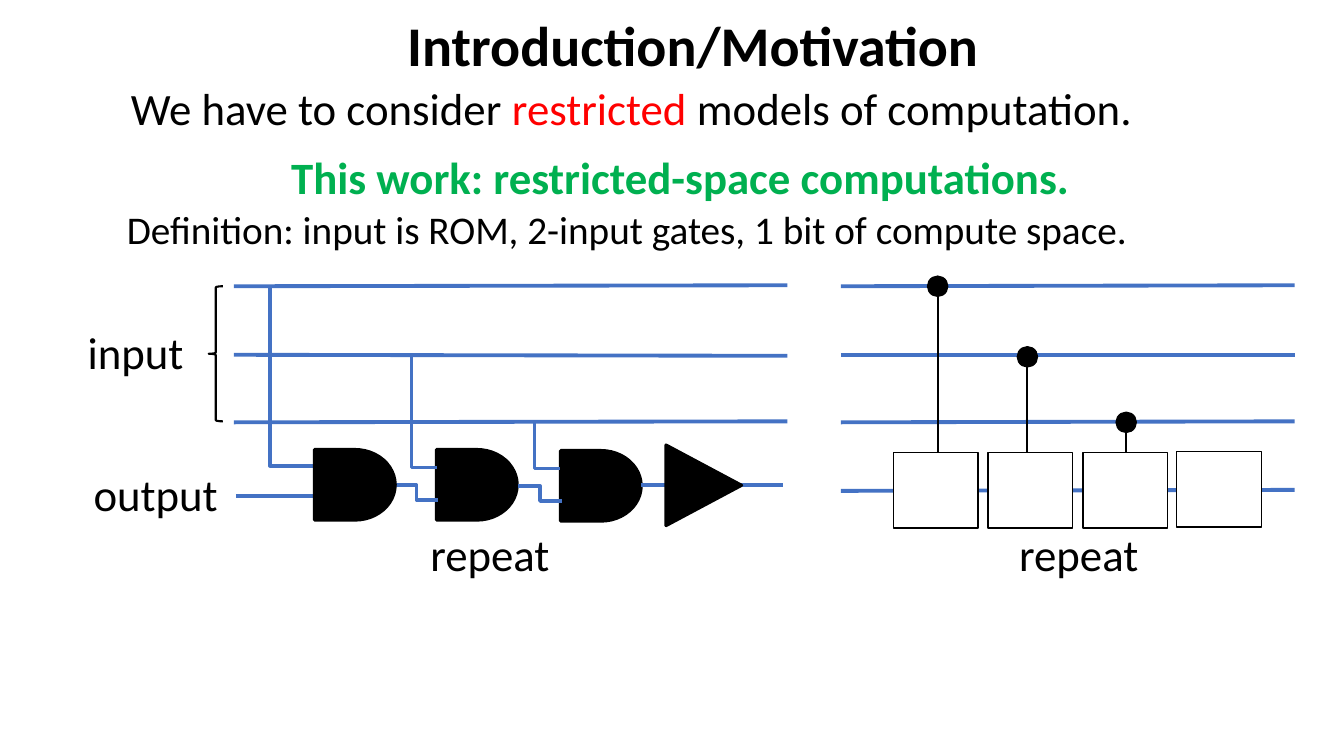
from dataclasses import dataclass

from lxml import etree
from pptx import Presentation
from pptx.dml.color import RGBColor
from pptx.enum.shapes import MSO_CONNECTOR, MSO_SHAPE
from pptx.enum.text import MSO_AUTO_SIZE, PP_ALIGN
from pptx.oxml.ns import qn
from pptx.util import Emu, Pt

STRAIGHT, ELBOW = MSO_CONNECTOR.STRAIGHT, MSO_CONNECTOR.ELBOW
RECT, OVAL, BRACE = MSO_SHAPE.RECTANGLE, MSO_SHAPE.OVAL, MSO_SHAPE.LEFT_BRACE
DELAY, EXTRACT = MSO_SHAPE.FLOWCHART_DELAY, MSO_SHAPE.FLOWCHART_EXTRACT
LEFT, MID, RIGHT = PP_ALIGN.LEFT, PP_ALIGN.CENTER, PP_ALIGN.RIGHT
FIT = MSO_AUTO_SIZE.SHAPE_TO_FIT_TEXT
PX = 9144  # 100 px to the inch


@dataclass(frozen=True)
class Theme:
    font: str = "Calibri"
    black: str = "000000"
    white: str = "FFFFFF"
    blue: str = "4472C4"
    red: str = "FF0000"
    green: str = "00B050"
    title: int = 40
    body: int = 32
    small: int = 28


THEME = Theme()


@dataclass(frozen=True)
class Label:
    box: tuple[int, int, int, int]
    runs: tuple[tuple[str, str], ...]
    size: int = THEME.body
    bold: bool = False
    align: PP_ALIGN = MID


@dataclass(frozen=True)
class Wire:
    start: tuple[int, int]
    end: tuple[int, int]
    width: float = 2.5
    color: str = THEME.blue
    bend: int | None = None  # per cent of the run before an elbow turns


@dataclass(frozen=True)
class Part:
    kind: MSO_SHAPE
    box: tuple[int, int, int, int]
    fill: str | None = THEME.black
    width: float = 1
    turn: int = 0


def px(*lengths: int) -> list[Emu]:
    return [Emu(n * PX) for n in lengths]


def rgb(code: str) -> RGBColor:
    return RGBColor.from_string(code)


def draw_label(slide, label: Label) -> None:
    frame = slide.shapes.add_textbox(*px(*label.box)).text_frame
    for name, value in {"word_wrap": True, "auto_size": FIT}.items():
        setattr(frame, name, value)
    para = frame.paragraphs[0]
    para.alignment = label.align
    style = {"name": THEME.font, "size": Pt(label.size), "bold": label.bold}
    for text, color in label.runs:
        run = para.add_run()
        run.text = text
        for name, value in style.items():
            setattr(run.font, name, value)
        run.font.color.rgb = rgb(color)


def draw_wire(slide, wire: Wire) -> None:
    kind = STRAIGHT if wire.bend is None else ELBOW
    line = slide.shapes.add_connector(kind, *px(*wire.start, *wire.end))
    line.line.width = Pt(wire.width)
    line.line.color.rgb = rgb(wire.color)
    props = line._element.spPr
    etree.SubElement(props, qn("a:effectLst"))
    if wire.bend is not None:
        guides = props.find(qn("a:prstGeom")).find(qn("a:avLst"))
        etree.SubElement(guides, qn("a:gd"), name="adj1", fmla=f"val {wire.bend * 1000}")


def draw_part(slide, part: Part) -> None:
    shape = slide.shapes.add_shape(part.kind, *px(*part.box))
    shape.shadow.inherit = False
    shape.rotation = part.turn
    if part.fill is None:
        shape.fill.background()
    else:
        shape.fill.solid()
        shape.fill.fore_color.rgb = rgb(part.fill)
    shape.line.width = Pt(part.width)
    shape.line.color.rgb = rgb(THEME.black)


def plain(text: str, color: str = THEME.black) -> tuple[tuple[str, str], ...]:
    return ((text, color),)


def gate(left: int, top: int) -> Part:
    return Part(DELAY, (left, top, 80, 70), width=2.25)


def cell(left: int, top: int = 449) -> Part:
    return Part(RECT, (left, top, 84, 75), THEME.white)


def control(x: int, y: int, left: int) -> list[Wire | Part]:
    """A dot on an input wire, its stem, and the cell it controls."""
    return [Wire((x, y), (x, 476), 1.5, THEME.black),
            Part(OVAL, (x - 10, y - 10, 20, 20)), cell(left)]


LABELS = [
    Label((290, 6, 794, 77), plain("Introduction/Motivation"), THEME.title, True),
    Label((120, 75, 1214, 64),
          (("We have to consider ", THEME.black), ("restricted", THEME.red),
           (" models of computation.", THEME.black)), align=LEFT),
    Label((68, 144, 1214, 64),
          plain("This work: restricted-space computations.", THEME.green), bold=True),
    Label((116, 199, 1142, 57),
          plain("Definition: input is ROM, 2-input gates, 1 bit of compute space."),
          THEME.small, align=LEFT),
    *(Label((left, 518, 320, 64), plain("repeat")) for left in (326, 910)),
    Label((69, 317, 123, 64), plain("input"), align=RIGHT),
    Label((69, 458, 157, 64), plain("output"), align=RIGHT),
]

QUANTUM = [
    *(Wire((834, a), (1284, b), 2.75)
      for a, b in ((284, 283), (352, 352), (419, 418), (487, 486))),
    *control(930, 284, 886),
    *control(1117, 419, 1074),
    *control(1019, 354, 980),
    cell(1167, 448),
]

CLASSIC = [
    *(Wire((232, a), (781, b), 2.75)
      for a, b in ((284, 283), (352, 353), (419, 418))),
    gate(433, 446),
    gate(556, 447),
    Wire((312, 462), (268, 284), 3, bend=100),
    Wire((234, 492), (311, 492)),
    Wire((392, 481), (434, 496), bend=50),
    Wire((433, 464), (408, 354), bend=100),
    Wire((514, 482), (557, 497), bend=50),
    Wire((555, 465), (530, 418), bend=100),
    Wire((636, 481), (777, 481)),
    Part(EXTRACT, (658, 444, 80, 75), width=2.25, turn=90),
    Part(BRACE, (207, 284, 14, 134), None, 1.5),
    gate(312, 446),
]


def main() -> None:
    deck = Presentation()
    deck.slide_width, deck.slide_height = px(1333, 750)
    slide = deck.slides.add_slide(deck.slide_layouts[6])
    for item in QUANTUM + LABELS + CLASSIC:
        if isinstance(item, Label):
            draw_label(slide, item)
        elif isinstance(item, Wire):
            draw_wire(slide, item)
        else:
            draw_part(slide, item)
    deck.save("out.pptx")


if __name__ == "__main__":
    main()
